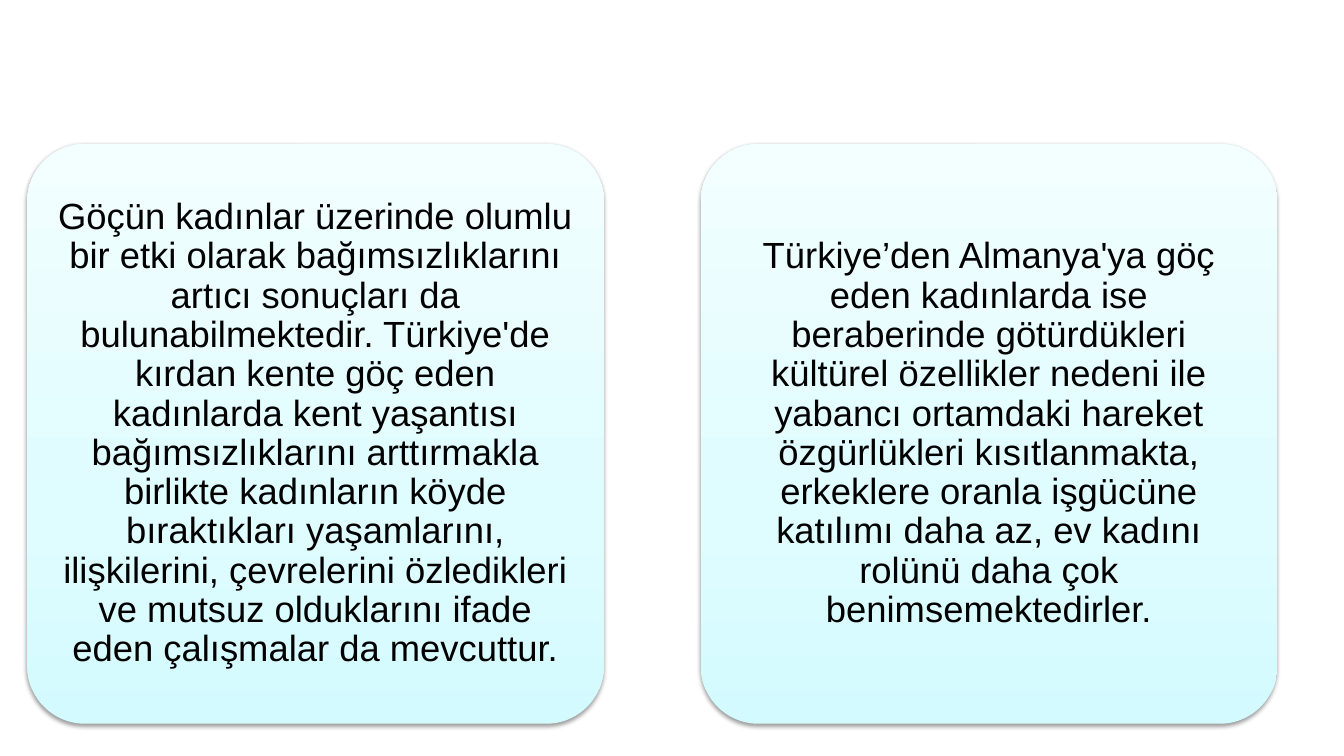
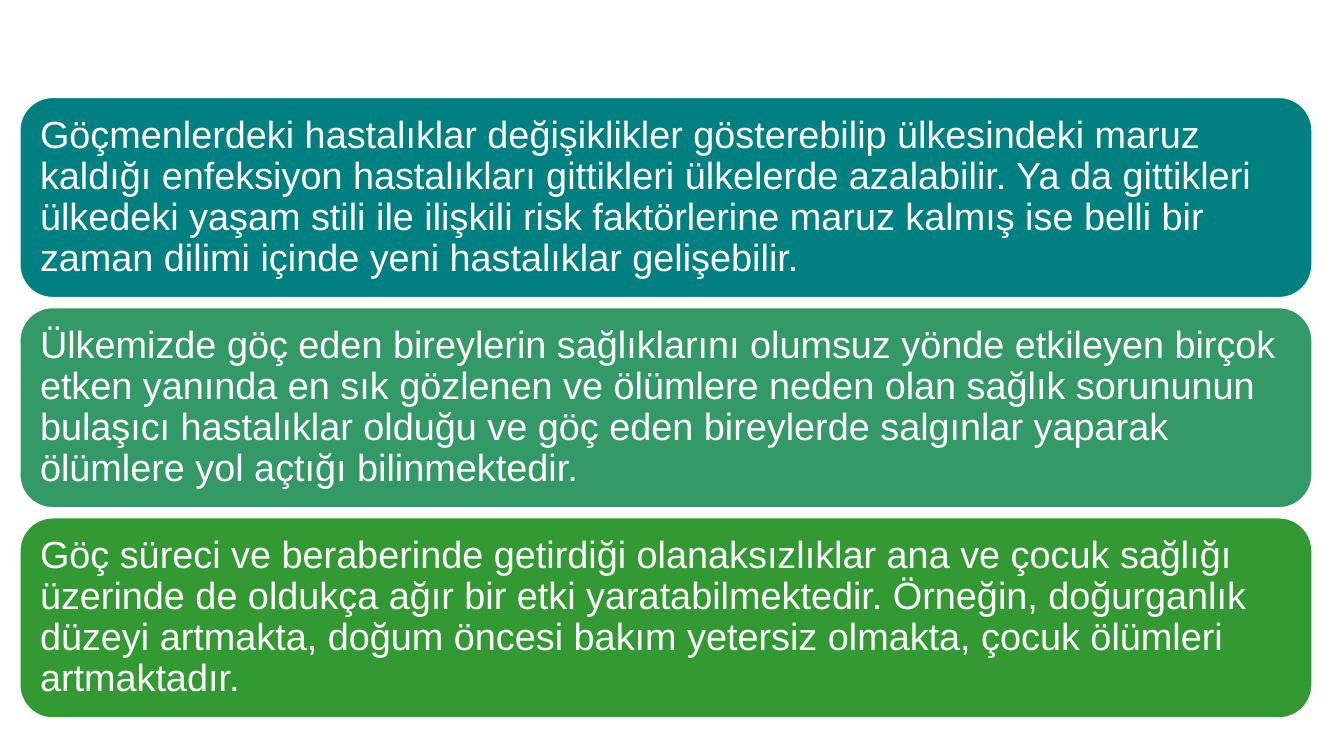
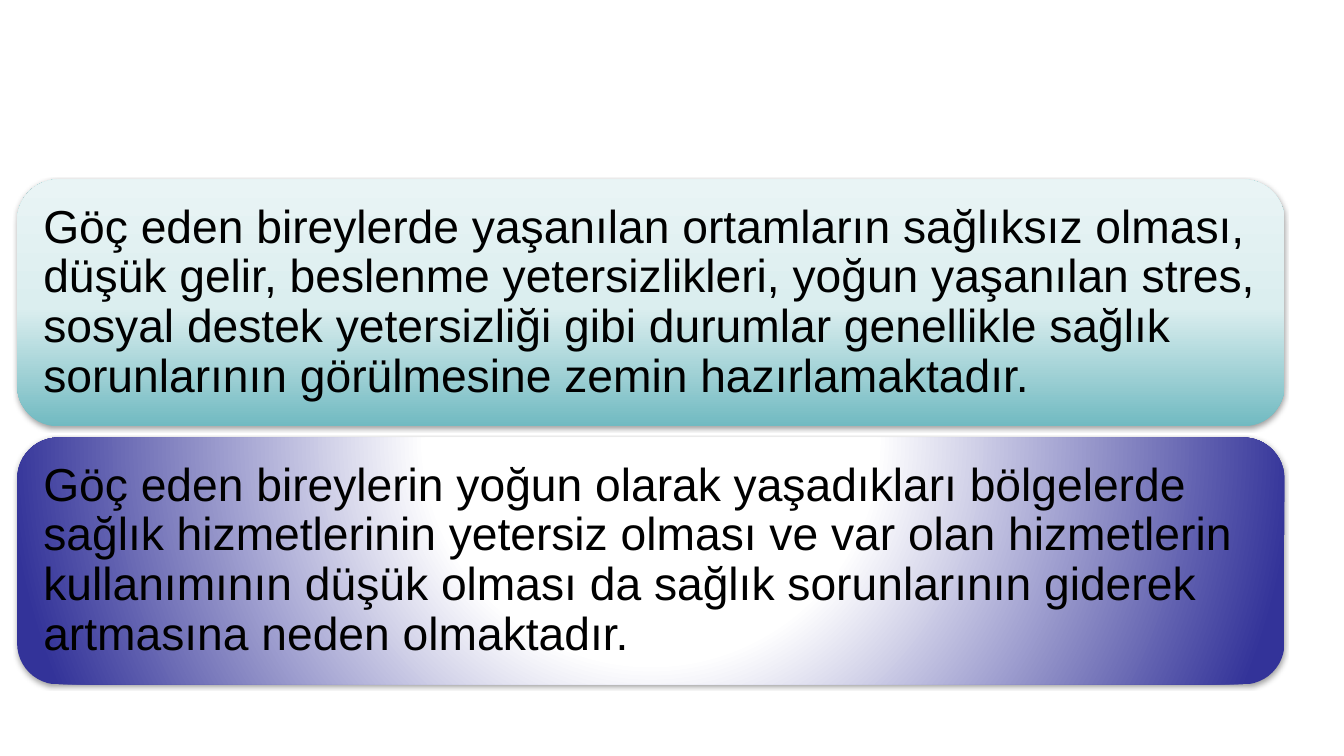
from lxml import etree
from pptx import Presentation
from pptx.dml.color import RGBColor
from pptx.enum import shapes, text
from pptx.oxml import parse_xml
from pptx.oxml.ns import nsdecls
from pptx.util import Inches, Pt

# Content and look of each slide's cards; first and last are top-left corners
UPWARD = '<a:lin ang="16200000" scaled="1"/>'
RADIAL = ('<a:path path="circle"><a:fillToRect l="50000" t="-80000" '
          'r="50000" b="180000"/></a:path>')
ICE = ([(0, "D3FBFF"), (35, "DFFCFF"), (100, "F2FEFF")], UPWARD)
TEAL = ([(0, "71BAC1"), (48, "DBEEEF"), (100, "E9F4F5")], UPWARD)
INDIGO = ([(0, "FFFFFF"), (35, "FFFFFF"), (100, "333399")], RADIAL)

SLIDES = [
    {
        "first": (0.27, 1.43), "last": (6.95, 1.43), "card": (5.72, 5.75),
        "corner": 0.1, "inset": 0.11, "size": 26, "ink": "000000", "align": "CENTER",
        "cards": [
            (ICE, "Göçün kadınlar üzerinde olumlu bir etki olarak bağımsızlıklarını "
                  "artıcı sonuçları da bulunabilmektedir. Türkiye'de kırdan kente göç "
                  "eden kadınlarda kent yaşantısı bağımsızlıklarını arttırmakla birlikte "
                  "kadınların köyde bıraktıkları yaşamlarını, ilişkilerini, çevrelerini "
                  "özledikleri ve mutsuz olduklarını ifade eden çalışmalar da mevcuttur."),
            (ICE, "Türkiye’den Almanya'ya göç eden kadınlarda ise beraberinde "
                  "götürdükleri kültürel özellikler nedeni ile yabancı ortamdaki hareket "
                  "özgürlükleri kısıtlanmakta, erkeklere oranla işgücüne katılımı daha "
                  "az, ev kadını rolünü daha çok benimsemektedirler."),
        ],
    },
    {
        "first": (0.19, 0.96), "last": (0.19, 5.13), "card": (12.83, 2),
        "corner": 0.16667, "inset": 0.11, "size": 27, "ink": "FFFFFF", "align": "LEFT",
        "cards": [
            ("008080", "Göçmenlerdeki hastalıklar değişiklikler gösterebilip ülkesindeki "
                       "maruz kaldığı enfeksiyon hastalıkları gittikleri ülkelerde "
                       "azalabilir. Ya da gittikleri ülkedeki yaşam stili ile ilişkili "
                       "risk faktörlerine maruz kalmış ise belli bir zaman dilimi içinde "
                       "yeni hastalıklar gelişebilir."),
            ("339966", "Ülkemizde göç eden bireylerin sağlıklarını olumsuz yönde "
                       "etkileyen birçok etken yanında en sık gözlenen ve ölümlere neden "
                       "olan sağlık sorununun bulaşıcı hastalıklar olduğu ve göç eden "
                       "bireylerde salgınlar yaparak ölümlere yol açtığı bilinmektedir."),
            ("339933", "Göç süreci ve beraberinde getirdiği olanaksızlıklar ana ve çocuk "
                       "sağlığı üzerinde de oldukça ağır bir etki yaratabilmektedir. "
                       "Örneğin, doğurganlık düzeyi artmakta, doğum öncesi bakım yetersiz "
                       "olmakta, çocuk ölümleri artmaktadır."),
        ],
    },
    {
        "first": (0.17, 1.78), "last": (0.17, 4.34), "card": (12.57, 2.45),
        "corner": 0.16667, "inset": 0.14, "size": 33, "ink": "000000", "align": "LEFT",
        "cards": [
            (TEAL, "Göç eden bireylerde yaşanılan ortamların sağlıksız olması, düşük "
                   "gelir, beslenme yetersizlikleri, yoğun yaşanılan stres, sosyal destek "
                   "yetersizliği gibi durumlar genellikle sağlık sorunlarının görülmesine "
                   "zemin hazırlamaktadır."),
            (INDIGO, "Göç eden bireylerin yoğun olarak yaşadıkları bölgelerde sağlık "
                     "hizmetlerinin yetersiz olması ve var olan hizmetlerin kullanımının "
                     "düşük olması da sağlık sorunlarının giderek artmasına neden "
                     "olmaktadır."),
        ],
    },
]

SHADOW = (f'<a:outerShdw {nsdecls("a")} blurRad="{Pt(3.1)}" dist="{Pt(1.6)}" '
          'dir="5400000" rotWithShape="0"><a:srgbClr val="000000">'
          '<a:alpha val="38000"/></a:srgbClr></a:outerShdw>')


def rgb(value):
    return RGBColor.from_string(value)


def paint_flat(card, colour):
    card.fill.solid()
    card.fill.fore_color.rgb = rgb(colour)
    card.line.color.rgb = rgb("FFFFFF")
    card.line.width = Pt(2)


def paint_gradient(card, stops, direction):
    """Gradient fill and soft shadow, without an outline."""
    card.line.fill.background()
    stop_xml = "".join(f'<a:gs pos="{pos * 1000}"><a:srgbClr val="{colour}"/></a:gs>'
                       for pos, colour in stops)
    gradient = parse_xml(f'<a:gradFill {nsdecls("a")} rotWithShape="1">'
                         f'<a:gsLst>{stop_xml}</a:gsLst>{direction}</a:gradFill>')
    properties = card.element.spPr
    properties.find("{*}prstGeom").addnext(gradient)
    etree.SubElement(properties.find("{*}effectLst"), "dummy").getparent()[:] = [
        parse_xml(SHADOW)]


def add_card(slide, look, left, top, paint, wording):
    width, height = look["card"]
    card = slide.shapes.add_shape(shapes.MSO_SHAPE.ROUNDED_RECTANGLE, Inches(left),
                                  Inches(top), Inches(width), Inches(height))
    card.adjustments[0] = look["corner"]
    card.shadow.inherit = False
    if isinstance(paint, str):
        paint_flat(card, paint)
    else:
        paint_gradient(card, *paint)

    # Wording
    frame = card.text_frame
    frame.word_wrap = True
    frame.vertical_anchor = text.MSO_ANCHOR.MIDDLE
    for side in ("left", "top", "right", "bottom"):
        setattr(frame, f"margin_{side}", Inches(look["inset"]))
    paragraph = frame.paragraphs[0]
    paragraph.alignment = text.PP_ALIGN[look["align"]]
    paragraph.line_spacing = 0.9
    run = paragraph.add_run()
    run.text = wording
    for attribute, value in {"name": "Arial", "size": Pt(look["size"])}.items():
        setattr(run.font, attribute, value)
    run.font.color.rgb = rgb(look["ink"])


def main():
    deck = Presentation()
    deck.slide_width, deck.slide_height = Inches(13.33), Inches(7.5)
    blank = deck.slide_layouts[6]
    for look in SLIDES:
        slide = deck.slides.add_slide(blank)
        steps = len(look["cards"]) - 1
        for index, (paint, wording) in enumerate(look["cards"]):
            # Cards are spread evenly from the first corner to the last
            left, top = (start + (end - start) * index / steps
                         for start, end in zip(look["first"], look["last"]))
            add_card(slide, look, left, top, paint, wording)
    deck.save("out.pptx")


if __name__ == "__main__":
    main()
